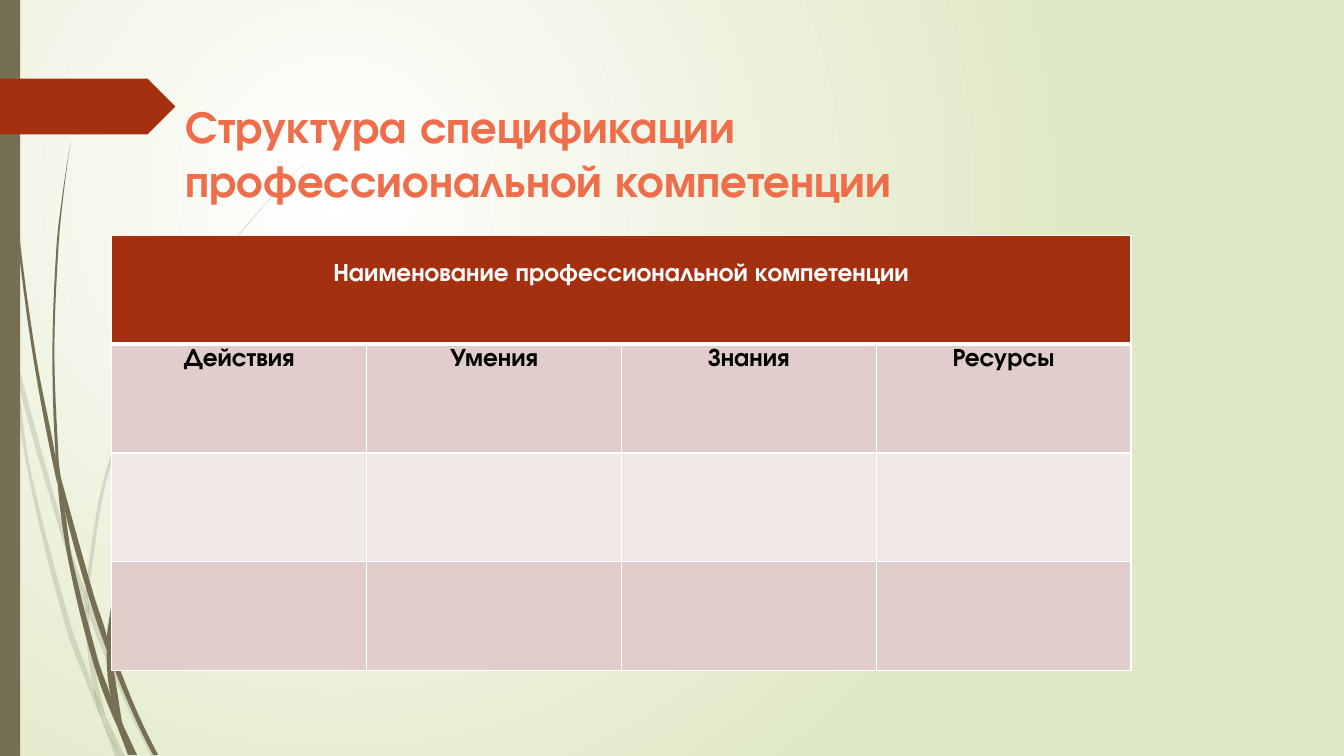
from lxml import etree
from pptx import Presentation
from pptx.dml.color import RGBColor
from pptx.enum import shapes, text
from pptx.oxml import ns
from pptx.util import Cm, Pt

FONT = "TeX Gyre Adventor"
COLORS = {
    "white": "FFFFFF",
    "black": "000000",
    "meadow": "DFE8C4",
    "olive": "766F54",
    "rust": "A53010",
    "coral": "EE6E4B",
    "rose": "E1CDCC",
    "pale": "F0E8E7",
}
GRASS_UNIT = 2.54
FAINT_BLADES = [
    ([(0, 2.99), (.1, 3.44), (.11, 3.5)], [(0, 2.82), (.09, 3.22), (.11, 3.5)]),
    ([(.14, 3.45), (.17, 3.76), (.58, 5.22), (.84, 5.99)],
     [(.14, 3.45), (.62, 5.2), (.85, 5.86)]),
    ([(.88, 5.96), (.88, 6.1), (1.23, 6.94), (1.5, 7.5)],
     [(.88, 5.96), (.92, 6.07), (1.27, 6.92), (1.55, 7.5)]),
    ([(1.05, 7.11), (1.19, 7.5)], [(1.05, 7.11), (1.24, 7.5)]),
    ([(.11, 3.5), (.28, 4.7), (.65, 6.21), (.92, 6.93), (1.01, 7.14)],
     [(.11, 3.5), (.17, 3.76), (.31, 4.69), (.7, 6.19), (.93, 6.83), (1.01, 7.14)]),
    ([(.84, 5.99), (.87, 6.46), (.93, 6.83), (1.05, 7.11)],
     [(.84, 5.99), (.88, 6.1), (.91, 6.46), (1.05, 7.11)]),
    ([(3.12, 1.53), (2.68, 1.97), (2.28, 2.44), (1.58, 3.48), (1.07, 4.61),
      (.85, 5.84), (.88, 5.96)],
     [(3.12, 1.53), (2.68, 1.98), (2.29, 2.45), (1.6, 3.49), (1.1, 4.62),
      (.88, 5.84), (.88, 5.96)]),
    ([(1.01, 7.14), (1.14, 7.5)], [(1.01, 7.14), (1.19, 7.5)]),
    ([(.85, 5.86), (.84, 5.99), (.88, 6.1)], [(.85, 5.86), (.88, 5.96), (.88, 6.1)]),
    ([(.93, 6.83), (1.01, 7.14), (1.19, 7.5)], [(.93, 6.83), (1.05, 7.11), (1.19, 7.5)]),
]
DARK_BLADES = [
    ([(.03, 0), (.07, 1.1), (.17, 2.33), (.33, 3.55), (.57, 4.81)],
     [(.04, 0), (.08, 1.09), (.19, 2.32), (.36, 3.55), (.55, 4.53), (.57, 4.81)]),
    ([(.6, 4.72), (.64, 5.05), (.88, 5.92), (1.06, 6.45)],
     [(.6, 4.72), (.93, 5.9), (1.06, 6.31), (1.06, 6.45)]),
    ([(1.1, 6.41), (1.11, 6.56), (1.32, 7.08), (1.52, 7.49)],
     [(1.1, 6.41), (1.13, 6.49), (1.36, 7.06), (1.57, 7.49)]),
    ([(.57, 4.77), (.68, 5.57), (.93, 6.59), (1.17, 7.22)],
     [(.57, 4.77), (.64, 5.05), (.72, 5.56), (.98, 6.57), (1.1, 6.91), (1.17, 7.22)]),
    ([(.7, 1.41), (.62, 1.93), (.56, 2.45), (.52, 3.49), (.55, 4.49), (.6, 4.72)],
     [(.7, 1.41), (.63, 1.93), (.58, 2.45), (.54, 3.49), (.58, 4.53), (.6, 4.72)]),
    ([(1.22, 7.19), (1.33, 7.49)], [(1.22, 7.19), (1.36, 7.49)]),
    ([(.55, 4.49), (.57, 4.77), (.64, 5.05)], [(.55, 4.49), (.6, 4.72), (.64, 5.05)]),
    ([(2.6, 3.44), (2.31, 3.73), (2.04, 4.05), (1.56, 4.74), (1.22, 5.51),
      (1.06, 6.31), (1.1, 6.41)],
     [(2.61, 3.44), (2.31, 3.74), (2.05, 4.06), (1.58, 4.76), (1.25, 5.52),
      (1.11, 6.33), (1.1, 6.41)]),
    ([(1.17, 7.22), (1.27, 7.49)], [(1.17, 7.22), (1.31, 7.49)]),
    ([(1.06, 6.45), (1.1, 6.91), (1.22, 7.19)],
     [(1.06, 6.45), (1.11, 6.56), (1.21, 7.16), (1.22, 7.19)]),
    ([(1.06, 6.31), (1.06, 6.45), (1.11, 6.56)], [(1.06, 6.31), (1.1, 6.41), (1.11, 6.56)]),
    ([(1.1, 6.91), (1.17, 7.22), (1.3, 7.49)], [(1.1, 6.91), (1.22, 7.19), (1.33, 7.49)]),
]


def rgb(name):
    return RGBColor.from_string(COLORS[name])


def sub(parent, tag, **attrs):
    return etree.SubElement(parent, ns.qn(tag), attrs)


def paint_background(s):
    fill = s.background.fill
    fill.gradient()
    for stop, name in zip(fill.gradient_stops, ("white", "meadow")):
        stop.color.rgb = rgb(name)
    grad = s.background._cSld.find(".//" + ns.qn("a:gradFill"))
    grad.remove(grad.find(ns.qn("a:lin")))
    circle = sub(grad, "a:path", path="circle")
    sub(circle, "a:fillToRect", l="50000", t="50000", r="100000", b="100000")


def paint(sp, name, alpha=None):
    sp.shadow.inherit = False
    sp.fill.solid()
    sp.fill.fore_color.rgb = rgb(name)
    sp.line.fill.background()
    if alpha:
        color = sp._element.spPr.find(".//" + ns.qn("a:srgbClr"))
        sub(color, "a:alpha", val=str(alpha * 1000))


def slope(a, b):
    return (b[0] - a[0]) / (b[1] - a[1])


def bezier_edge(edge):
    inner = [slope(a, c) for a, c in zip(edge, edge[2:])]
    first, last = slope(*edge[:2]), slope(*edge[-2:])
    if inner:
        first, last = 2 * first - inner[0], 2 * last - inner[-1]
    slopes = [first, *inner, last]
    points = [edge[0]]
    for (x0, y0), (x1, y1), m0, m1 in zip(edge, edge[1:], slopes, slopes[1:]):
        third = (y1 - y0) / 3
        points += [(x0 + m0 * third, y0 + third), (x1 - m1 * third, y1 - third), (x1, y1)]
    return points


def add_blade(s, left, right, alpha=None):
    down, up = bezier_edge(left), bezier_edge(right)[::-1]
    outline = down + [down[-1], up[0]] + up
    points = [(Cm(x * GRASS_UNIT), Cm(y * GRASS_UNIT)) for x, y in outline]
    builder = s.shapes.build_freeform(*points[0])
    builder.add_line_segments(points[1:], close=True)
    sp = builder.convert_to_shape()
    lines = list(sp._element.iter(ns.qn("a:lnTo")))
    for i in range(0, len(lines) - 2, 3):
        curve = etree.Element(ns.qn("a:cubicBezTo"))
        lines[i].addprevious(curve)
        for line in lines[i:i + 3]:
            curve.append(line[0])
            line.getparent().remove(line)
    paint(sp, "olive", alpha)


def add_block(s, kind, name, top, width, height):
    sp = s.shapes.add_shape(kind, 0, Cm(top), Cm(width), Cm(height))
    paint(sp, name)


def style_text(p, size, name):
    for r in p.runs:
        r.font.name = FONT
        r.font.size = Pt(size)
        r.font.bold = True
        r.font.color.rgb = rgb(name)


def add_title(s, title):
    tf = s.shapes.add_textbox(Cm(4.42), Cm(2.34), Cm(23.85), Cm(3.18)).text_frame
    tf.word_wrap = True
    tf.vertical_anchor = text.MSO_ANCHOR.TOP
    tf.text = title
    style_text(tf.paragraphs[0], 32.4, "coral")


def set_borders(cell, bottom):
    tcPr = cell._tc.get_or_add_tcPr()
    widths = {"a:lnL": 1, "a:lnR": 1, "a:lnT": 1, "a:lnB": bottom}
    for i, (tag, width) in enumerate(widths.items()):
        ln = sub(tcPr, tag, w=str(Pt(width)))
        sub(sub(ln, "a:solidFill"), "a:srgbClr", val=COLORS["white"])
        tcPr.insert(i, ln)


def fill_cell(cell, label, fill, color, top=0.13):
    cell.margin_left = cell.margin_right = Cm(0.33)
    cell.margin_top, cell.margin_bottom = Cm(top), Cm(0.13)
    cell.text_frame.text = label
    p = cell.text_frame.paragraphs[0]
    p.alignment = text.PP_ALIGN.CENTER
    p.line_spacing = 0.9
    style_text(p, 18, color)
    cell.fill.solid()
    cell.fill.fore_color.rgb = rgb(fill)


def add_competence_table(s, heading, columns):
    count = len(columns)
    table = s.shapes.add_table(4, count, Cm(2.82), Cm(5.93), Cm(25.68), Cm(10.97)).table
    table.first_row = table.horz_banding = False
    for i, row in enumerate(table.rows):
        for j, cell in enumerate(row.cells):
            if i == 0:
                fill_cell(cell, heading if j == 0 else "", "rust", "white", 0.74)
            else:
                label = columns[j] if i == 1 else ""
                fill_cell(cell, label, "rose" if i % 2 else "pale", "black")
            set_borders(cell, 3 if i == 0 else 1)
    table.cell(0, 0).merge(table.cell(0, count - 1))


def main():
    prs = Presentation()
    prs.slide_width, prs.slide_height = Cm(33.87), Cm(19.05)
    s = prs.slides.add_slide(prs.slide_layouts[6])
    paint_background(s)
    for blades, alpha in ((FAINT_BLADES, 20), (DARK_BLADES, None)):
        for left, right in blades:
            add_blade(s, left, right, alpha)
    add_block(s, shapes.MSO_SHAPE.RECTANGLE, "olive", 0, 0.51, 19.05)
    add_block(s, shapes.MSO_SHAPE.PENTAGON, "rust", 1.98, 4.42, 1.41)
    add_title(s, "Структура спецификации профессиональной компетенции")
    add_competence_table(s, "Наименование профессиональной компетенции",
                         ["Действия", "Умения", "Знания", "Ресурсы"])
    prs.save("out.pptx")


if __name__ == "__main__":
    main()
